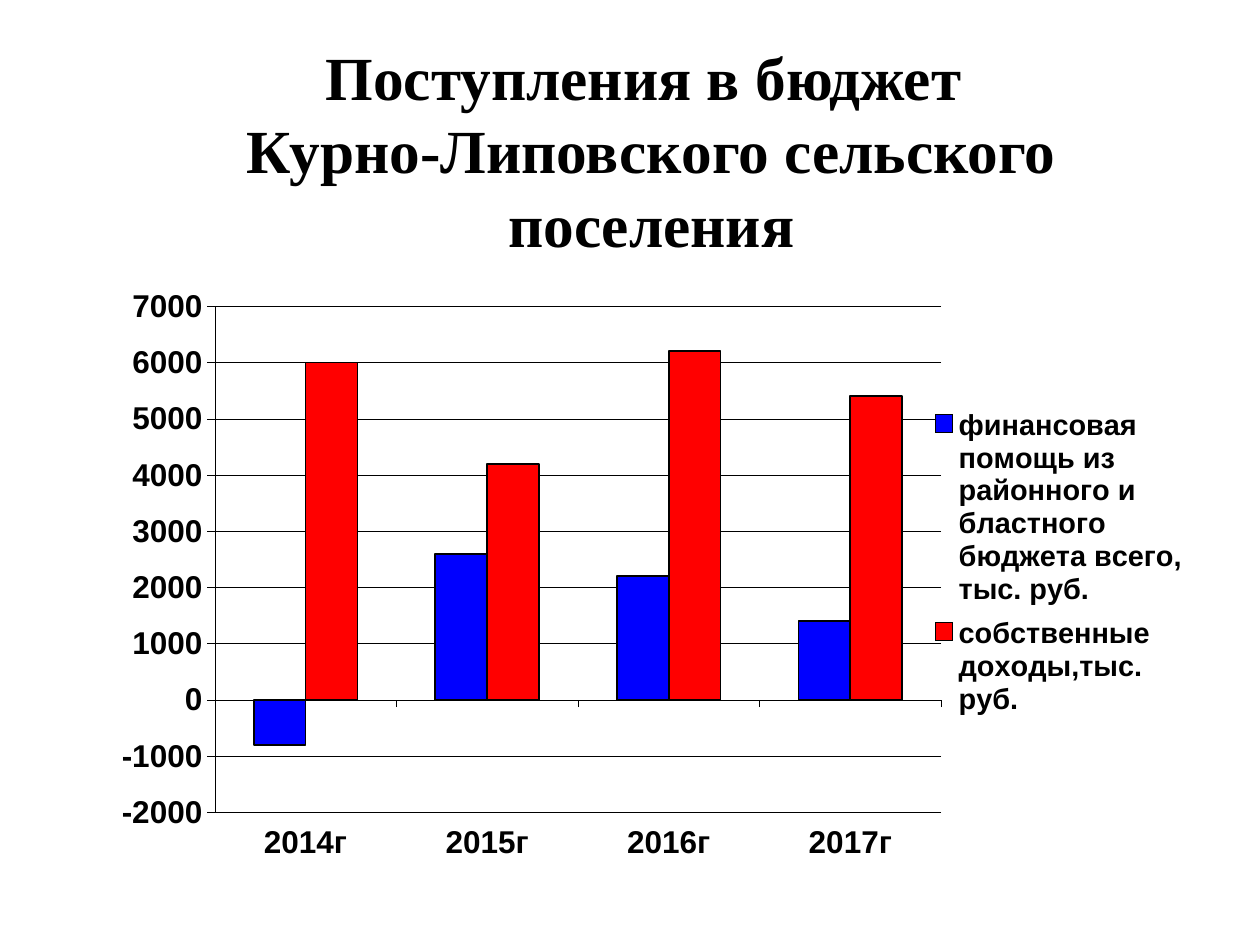
from lxml import etree
from pptx import Presentation, util as u
from pptx.chart.data import CategoryChartData
from pptx.dml.color import RGBColor
from pptx.enum import chart as ch, text
from pptx.oxml.ns import qn

BLACK = RGBColor(0, 0, 0)
BLUE = RGBColor(0, 0, 255)
RED = RGBColor(255, 0, 0)
WIDE, HIGH = u.Inches(10), u.Inches(7.5)

TITLE = ["Поступления в бюджет ", "Курно-Липовского сельского поселения"]
YEARS = ["2014г", "2015г", "2016г", "2017г"]
SERIES = [
    ("финансовая помощь из районного и бластного бюджета всего, тыс. руб.",
     (-800, 2600, 2200, 1400), BLUE),
    ("собственные доходы,тыс. руб.", (6000, 4200, 6200, 5400), RED),
]


def share(left, top, width, height):
    """Turn shares of the slide's size into lengths."""
    return [int(part * full) for part, full in
            zip((left, top, width, height), (WIDE, HIGH) * 2)]


def style(font, size, name="Arial"):
    font.name, font.size, font.bold = name, u.Pt(size), True
    font.color.rgb = BLACK


def stroke(line, width):
    line.color.rgb = BLACK
    line.width = u.Pt(width)


def place(parent, before, *box, inner=False):
    """Fix a chart part at x, y, w, h as shares of the chart."""
    for old in parent.findall(qn("c:layout")):
        parent.remove(old)
    layout = etree.Element(qn("c:layout"))
    manual = etree.SubElement(layout, qn("c:manualLayout"))
    rules = [("layoutTarget", "inner")] if inner else []
    rules += [("xMode", "edge"), ("yMode", "edge"), *zip("xywh", box)]
    for tag, val in rules:
        etree.SubElement(manual, qn("c:" + tag)).set("val", str(val))
    parent.find(qn(before)).addprevious(layout)


def add_title(slide):
    title = slide.shapes.title
    title.left, title.top, title.width, title.height = share(.067, .033, .9, .25)
    frame = title.text_frame
    frame.word_wrap = True
    frame.auto_size = text.MSO_AUTO_SIZE.NONE
    frame.vertical_anchor = text.MSO_ANCHOR.MIDDLE
    frame.text = "\n".join(TITLE)
    for para in frame.paragraphs:
        para.alignment = text.PP_ALIGN.CENTER
        style(para.font, 35, "Times New Roman")


def format_axis(axis):
    axis.major_tick_mark = ch.XL_TICK_MARK.OUTSIDE
    axis.minor_tick_mark = ch.XL_TICK_MARK.NONE
    axis.tick_label_position = ch.XL_TICK_LABEL_POSITION.LOW
    style(axis.tick_labels.font, 18)
    stroke(axis.format.line, .25)


def add_chart(slide):
    data = CategoryChartData()
    data.categories = YEARS
    for name, vals, _ in SERIES:
        data.add_series(name, vals)
    chart = slide.shapes.add_chart(ch.XL_CHART_TYPE.COLUMN_CLUSTERED,
                                   *share(.064, .292, .887, .645), data).chart
    chart.has_title = False
    style(chart.font, 18)

    for axis in (chart.category_axis, chart.value_axis):
        format_axis(axis)
    scale = chart.value_axis
    scale.minimum_scale, scale.maximum_scale = -2000, 7000
    scale.major_unit = 1000
    scale.has_major_gridlines = True
    stroke(scale.major_gridlines.format.line, .25)

    plot = chart.plots[0]
    plot.gap_width, plot.overlap = 150, 0
    plot.vary_by_categories = False
    for bars, (_, _, color) in zip(plot.series, SERIES):
        bars.invert_if_negative = False
        bars.format.fill.solid()
        bars.format.fill.fore_color.rgb = color
        stroke(bars.format.line, 1)

    chart.has_legend = True
    legend = chart.legend
    legend.position = ch.XL_LEGEND_POSITION.RIGHT
    legend.include_in_layout = False
    style(legend.font, 16.5)
    area = plot._element.getparent()
    place(area, "c:barChart", .12, .05, .65, .83, inner=True)
    place(area.getparent().find(qn("c:legend")), "c:overlay",
          .76, .2, .23, .54)


def main():
    deck = Presentation()
    deck.slide_width, deck.slide_height = WIDE, HIGH
    slide = deck.slides.add_slide(deck.slide_layouts[5])
    add_title(slide)
    add_chart(slide)
    deck.save("out.pptx")


if __name__ == "__main__":
    main()
